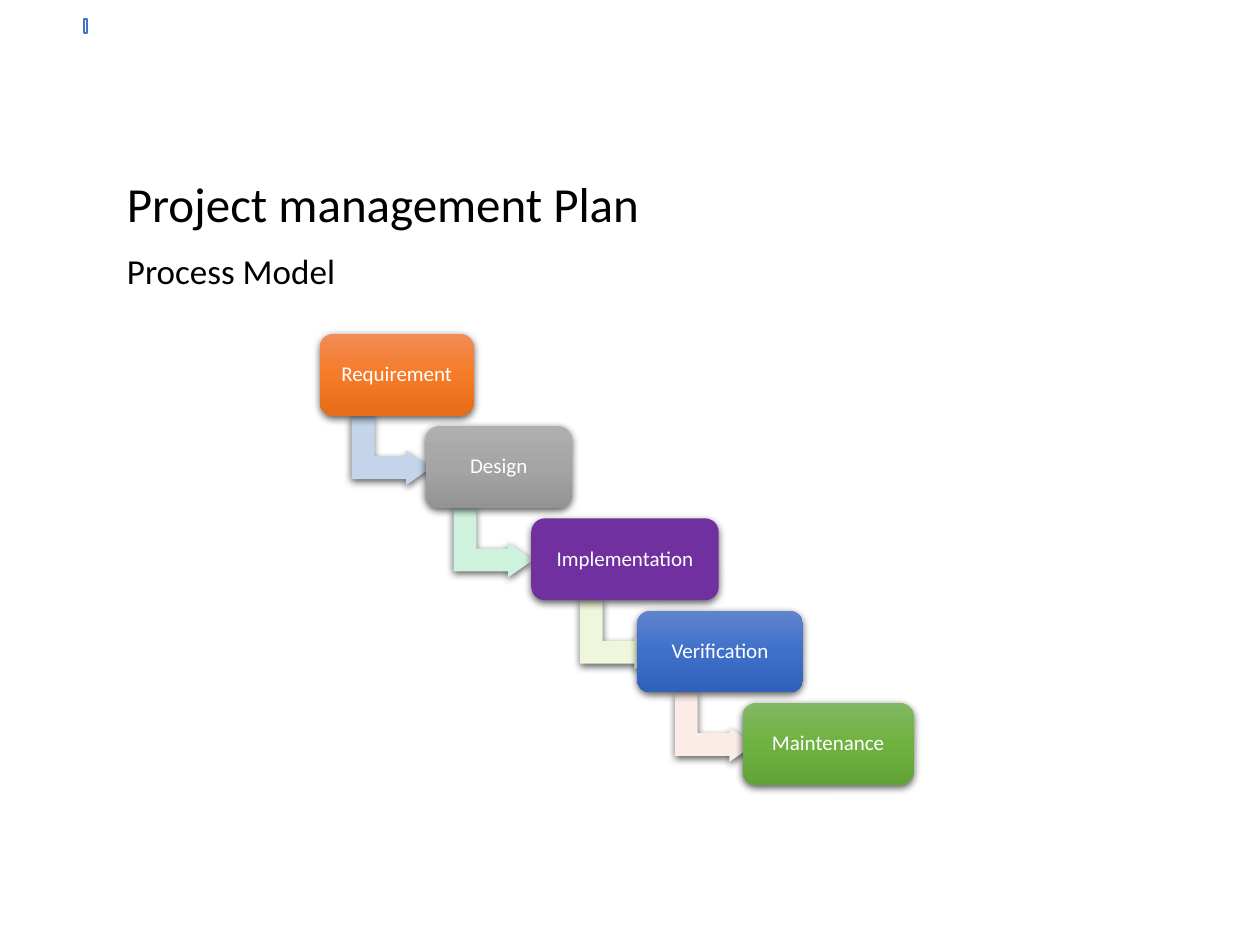
from copy import deepcopy

from lxml import etree
from pptx import Presentation
from pptx import util as u
from pptx.dml.color import RGBColor
from pptx.enum import shapes, text
from pptx.oxml.ns import qn

WHITE = RGBColor(0xFF, 0xFF, 0xFF)
BLACK = RGBColor(0x00, 0x00, 0x00)
BLUE = RGBColor(0x44, 0x72, 0xC4)
PURPLE = RGBColor(0x70, 0x30, 0xA0)
ORANGES = [RGBColor(0xF1, 0x8C, 0x57), RGBColor(0xF6, 0x7B, 0x28), RGBColor(0xE5, 0x6C, 0x19)]
GREYS = [RGBColor(0xAF, 0xAF, 0xAF), RGBColor(0xA5, 0xA5, 0xA5), RGBColor(0x93, 0x93, 0x93)]
BLUES = [RGBColor(0x61, 0x83, 0xCB), RGBColor(0x3E, 0x70, 0xCA), RGBColor(0x30, 0x62, 0xBB)]
GREENS = [RGBColor(0x81, 0xB8, 0x61), RGBColor(0x6F, 0xB2, 0x42), RGBColor(0x62, 0xA3, 0x36)]
PALE_BLUE = RGBColor(0xC4, 0xD5, 0xEB)
PALE_MINT = RGBColor(0xCF, 0xF2, 0xDF)
PALE_LIME = RGBColor(0xEE, 0xF7, 0xDB)
PALE_ROSE = RGBColor(0xFC, 0xEC, 0xE8)

# Name, box width, box fill, colour of the arrow to the next phase
PHASES = [
    ("Requirement", 3.1, ORANGES, PALE_BLUE),
    ("Design", 2.95, GREYS, PALE_MINT),
    ("Implementation", 3.78, [PURPLE], PALE_LIME),
    ("Verification", 3.35, BLUES, PALE_ROSE),
    ("Maintenance", 3.45, GREENS, None),
]
FIRST_LEFT, FIRST_TOP = 6.45, 6.73
STEP_RIGHT, STEP_DOWN = 2.13, 1.86
BOX_HEIGHT = 1.65
ARROW_WIDTH, ARROW_HEIGHT = 1.4, 1.6


def write(frame, words, size=12, color=WHITE, align=text.PP_ALIGN.CENTER,
          anchor=text.MSO_ANCHOR.MIDDLE, spacing=0.9, wrap=True, font="Calibri"):
    frame.word_wrap = wrap
    frame.vertical_anchor = anchor
    para = frame.paragraphs[0]
    para.alignment = align
    para.line_spacing = spacing
    span = para.add_run()
    span.text = words
    span.font.name = font
    span.font.size = u.Pt(size)
    span.font.color.rgb = color


class Painter:
    """Draws styled elements on the current slide."""

    def __init__(self, page):
        self.page = page

    def label(self, words, left, top, width, height, **style):
        box = self.page.shapes.add_textbox(*map(u.Cm, (left, top, width, height)))
        write(box.text_frame, words, align=text.PP_ALIGN.LEFT, **style)

    def shape(self, kind, left, top, width, height, colors):
        """Add an unlined shape; several colours make a downward gradient."""
        shape = self.page.shapes.add_shape(kind, *map(u.Cm, (left, top, width, height)))
        shape.line.fill.background()
        shape.shadow.inherit = False
        if len(colors) == 1:
            shape.fill.solid()
            shape.fill.fore_color.rgb = colors[0]
        else:
            self.blend(shape, colors)
        return shape

    def blend(self, shape, colors):
        shape.fill.gradient()
        shape.fill.gradient_angle = 270
        stop_list = shape.fill._xPr.find(".//" + qn("a:gsLst"))
        while len(stop_list) < len(colors):
            stop_list.append(deepcopy(stop_list[0]))
        for i, (stop, color) in enumerate(zip(shape.fill.gradient_stops, colors)):
            stop.position = i / (len(colors) - 1)
            stop.color.rgb = color

    def cast_shadow(self, shape):
        effects = shape._element.spPr.find(qn("a:effectLst"))
        shadow = etree.SubElement(effects, qn("a:outerShdw"), blurRad=str(u.Pt(4.5)),
                                  dist=str(u.Pt(1.5)), dir="5400000",
                                  algn="ctr", rotWithShape="0")
        color = etree.SubElement(shadow, qn("a:srgbClr"), val=str(BLACK))
        etree.SubElement(color, qn("a:alpha"), val="63000")

    def arrow(self, center, top, color):
        arrow = self.shape(shapes.MSO_SHAPE.BENT_UP_ARROW, center - ARROW_WIDTH / 2, top,
                           ARROW_WIDTH, ARROW_HEIGHT, [color])
        arrow.rotation = 90
        for i, value in enumerate((0.328, 0.25, 0.358)):
            arrow.adjustments[i] = value
        self.cast_shadow(arrow)

    def phase(self, name, left, top, width, colors):
        box = self.shape(shapes.MSO_SHAPE.ROUNDED_RECTANGLE, left, top, width,
                         BOX_HEIGHT, colors)
        self.cast_shadow(box)
        frame = box.text_frame
        frame.margin_left = frame.margin_right = u.Cm(0.13)
        frame.margin_top = frame.margin_bottom = u.Cm(0.13)
        write(frame, name)


def main():
    deck = Presentation()
    deck.slide_width, deck.slide_height = u.Cm(25.4), u.Cm(19.05)
    painter = Painter(deck.slides.add_slide(deck.slide_layouts[6]))

    marker = painter.shape(shapes.MSO_SHAPE.RECTANGLE, 1.7, 0.38, 0.05, 0.28, [WHITE])
    marker.line.color.rgb = BLUE
    marker.line.width = u.Pt(1)

    painter.label("Project management Plan", 2.31, 3.45, 14.94, 1.45, size=28, color=BLACK)
    painter.label("Process Model", 2.31, 4.9, 5.1, 1.12, size=20, color=BLACK,
                  anchor=text.MSO_ANCHOR.TOP, spacing=1.0, wrap=False)

    for i, (name, width, colors, arrow_color) in enumerate(PHASES):
        left = FIRST_LEFT + i * STEP_RIGHT
        top = FIRST_TOP + i * STEP_DOWN
        if arrow_color is not None:
            painter.arrow(left + width / 2 - 0.11, top + 1.55, arrow_color)
        painter.phase(name, left, top, width, colors)

    deck.save("out.pptx")


if __name__ == "__main__":
    main()
